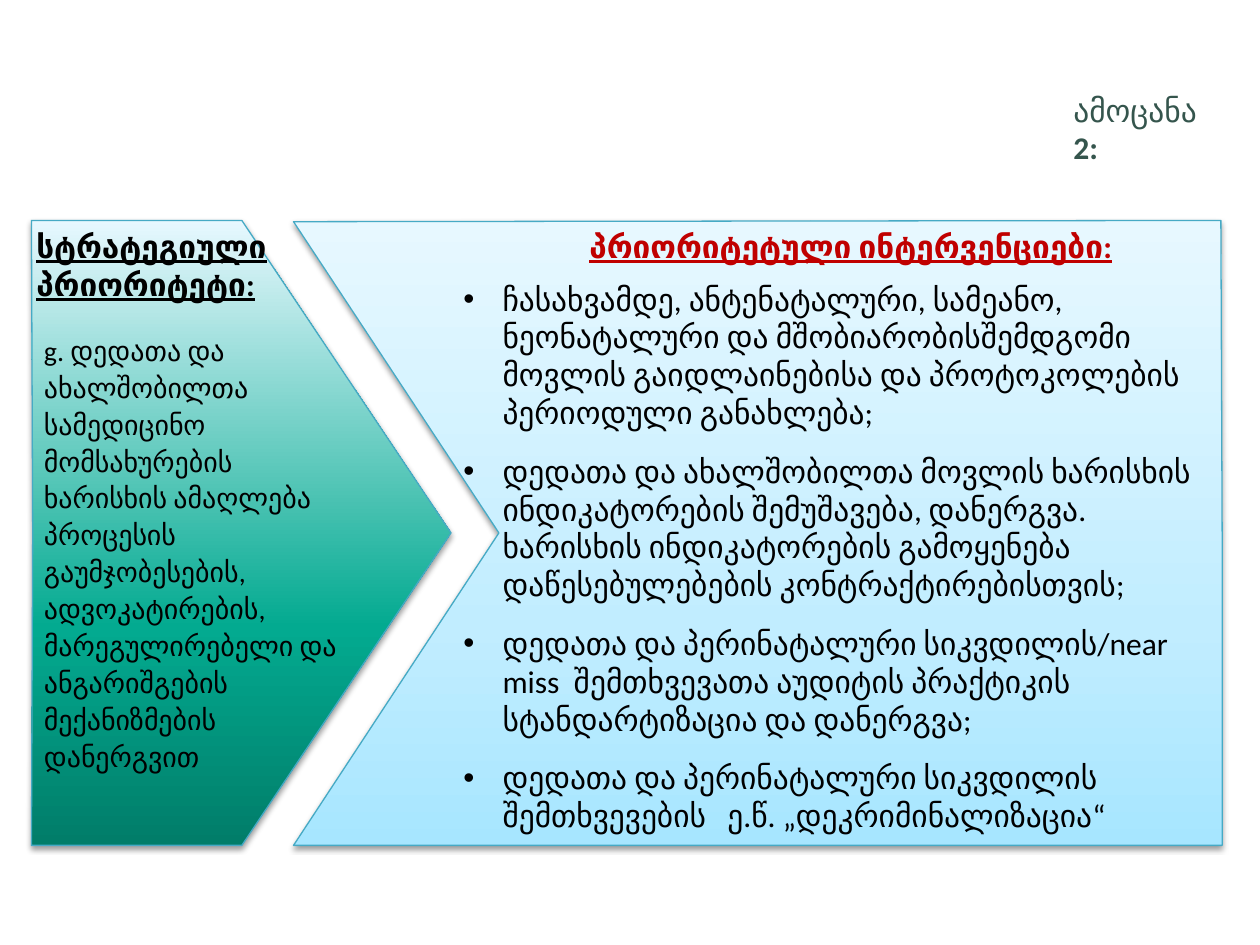
import pptx
import pptx.util
import pptx.dml.color
import pptx.enum.text
import pptx.oxml
import pptx.oxml.ns
from lxml import etree

WIDE, HIGH = 10, 7.5
FONT = "Calibri"
EDGE, BLACK, RED, GREEN = "46AAC5", "000000", "C00000", "35554D"
TOP, MID, LOW = 1.75, 4.23, 6.71

# Content: text as (words, bold, underlined) runs
TASK = [("ამოცანა", False, False), (" 2:", True, False)]
GOAL_HEAD = [("სტრატეგიული პრიორიტეტი:", True, True)]
GOAL = [("g. დედათა და ახალშობილთა სამედიცინო მომსახურების  ხარისხის ამაღლება "
         "პროცესის გაუმჯობესების, ადვოკატირების, მარეგულირებელი და ანგარიშგების "
         "მექანიზმების დანერგვით", False, False)]
STEP_HEAD = [("პრიორიტეტული ინტერვენციები:", True, True)]
STEPS = [
    "ჩასახვამდე, ანტენატალური, სამეანო, ნეონატალური და მშობიარობისშემდგომი "
    "მოვლის გაიდლაინებისა და პროტოკოლების პერიოდული განახლება;",
    "დედათა და ახალშობილთა მოვლის ხარისხის ინდიკატორების შემუშავება, დანერგვა. "
    "ხარისხის ინდიკატორების გამოყენება დაწესებულებების კონტრაქტირებისთვის;",
    "დედათა და პერინატალური სიკვდილის/near miss  შემთხვევათა აუდიტის პრაქტიკის "
    "სტანდარტიზაცია და დანერგვა;",
    "დედათა და პერინატალური სიკვდილის შემთხვევების   ე.წ. „დეკრიმინალიზაცია“",
]

# Panels: outline points and gradient stops from bottom to top
PANELS = [
    ([(0.25, TOP), (1.92, TOP), (3.58, MID), (1.92, LOW), (0.25, LOW), (0.26, MID)],
     [(0, "017D69"), (35, "03AA90"), (100, "E7F8FF")]),
    ([(2.33, 1.76), (9.69, TOP), (9.7, MID), (9.7, LOW), (2.33, LOW), (3.96, MID)],
     [(0, "A7E6FF"), (35, "C1EDFF"), (100, "E7F8FF")]),
]

# Text boxes: left, top, width, height, paragraphs, size, colour, style
BOXES = [
    (8.42, 0.67, 1.35, 0.4, [TASK], 18, GREEN, {}),
    (3.58, 2.17, 6.11, 4.54, [[(s, False, False)] for s in STEPS], 18, BLACK,
     {"gap": 6, "bullet": True}),
    (0.25, 2.57, 2.72, 3.66, [GOAL], 16, BLACK, {"gap": 6, "lead": 1.1}),
    (4.58, TOP, 4.75, 0.4, [STEP_HEAD], 18, RED, {"gap": 6}),
    (0.19, TOP, 2.06, 0.71, [GOAL_HEAD], 18, BLACK, {}),
]

inch, point = pptx.util.Inches, pptx.util.Pt
qn = pptx.oxml.ns.qn


def color(text):
    return pptx.dml.color.RGBColor.from_string(text)


def node(top, tag, **attrs):
    return etree.SubElement(top, qn(tag), {k: str(v) for k, v in attrs.items()})


def add_panel(slide, dots, stops):
    # The builder keeps whole units only, so points go in as EMU
    first, *rest = [(inch(x), inch(y)) for x, y in dots]
    build = slide.shapes.build_freeform(*first)
    build.add_line_segments(rest, close=True)
    shape = build.convert_to_shape()
    shape.fill.gradient()
    shape.fill.gradient_angle = 90
    shape.line.color.rgb = color(EDGE)
    shape.line.width = point(0.75)
    shape.shadow.inherit = False
    props = shape.element.spPr

    # Three gradient stops
    items = props.find(".//" + qn("a:gsLst"))
    for old in list(items):
        items.remove(old)
    for share, tint in stops:
        stop = node(items, "a:gs", pos=share * 1000)
        node(stop, "a:srgbClr", val=tint)

    # Soft shadow straight below
    cast = node(props.find(qn("a:effectLst")), "a:outerShdw", blurRad=point(3.1),
                dist=point(1.6), dir=90 * 60000, rotWithShape=0)
    node(node(cast, "a:srgbClr", val=BLACK), "a:alpha", val=38000)


def add_text(slide, left, top, width, height, paras, size, tint, style):
    box = slide.shapes.add_textbox(inch(left), inch(top), inch(width), inch(height))
    frame = box.text_frame
    frame.word_wrap = True
    frame.auto_size = pptx.enum.text.MSO_AUTO_SIZE.SHAPE_TO_FIT_TEXT
    for i, runs in enumerate(paras):
        para = frame.add_paragraph() if i else frame.paragraphs[0]
        if "lead" in style:
            para.line_spacing = style["lead"]
        if "gap" in style:
            para.space_before = para.space_after = point(style["gap"])
        if "bullet" in style:
            props = para._p.get_or_add_pPr()
            props.set("marL", str(inch(0.31)))
            props.set("indent", str(-inch(0.31)))
            node(props, "a:buFont", typeface="Arial")
            node(props, "a:buChar", char="•")
        for words, bold, under in runs:
            run = para.add_run()
            run.text = words
            font = run.font
            font.name, font.size = FONT, point(size)
            font.bold, font.underline = bold, under
            font.color.rgb = color(tint)


def main():
    deck = pptx.Presentation()
    deck.slide_width, deck.slide_height = inch(WIDE), inch(HIGH)
    slide = deck.slides.add_slide(deck.slide_layouts[6])
    for panel in PANELS:
        add_panel(slide, *panel)
    for box in BOXES:
        add_text(slide, *box)
    deck.save("out.pptx")


if __name__ == "__main__":
    main()
